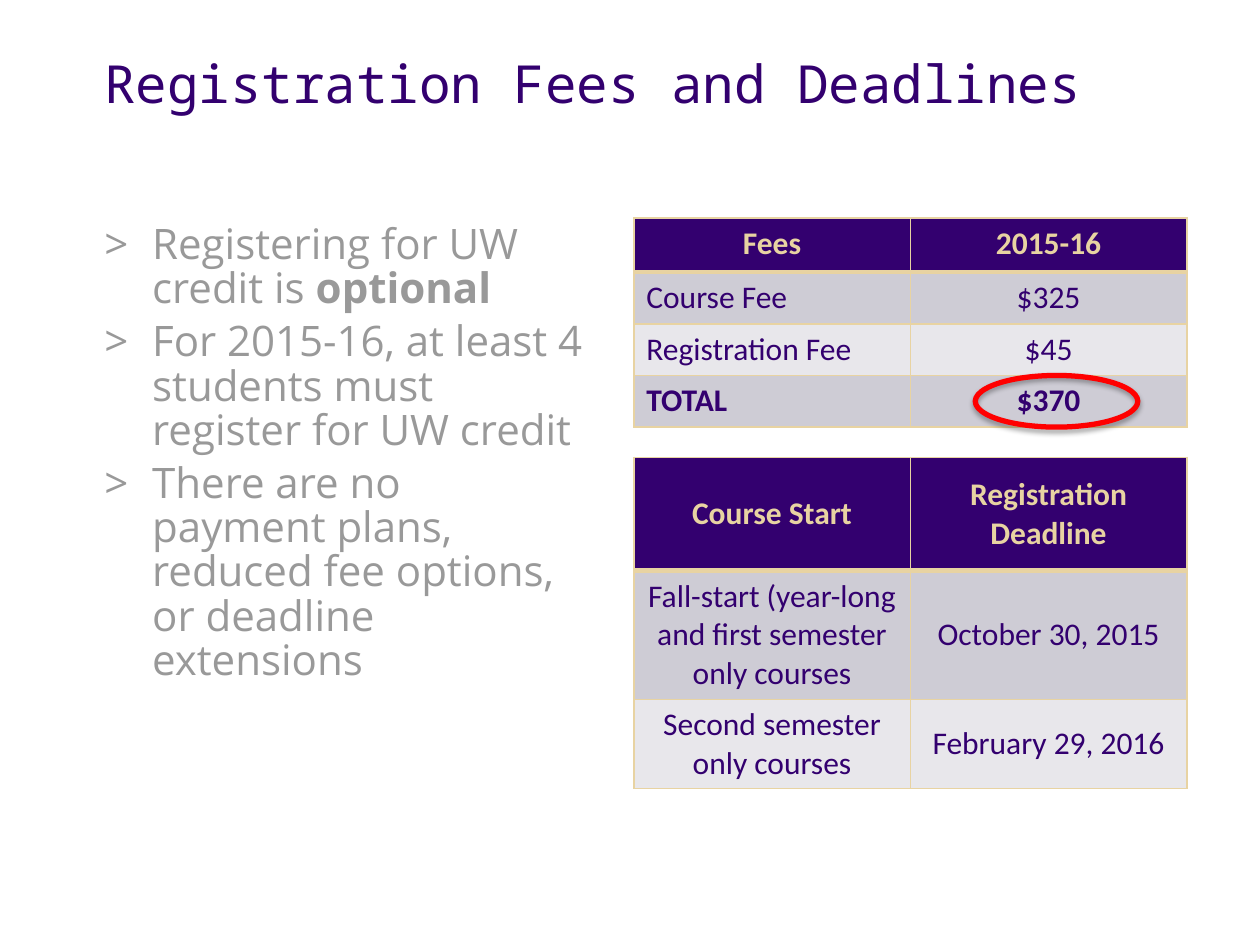
from lxml.etree import SubElement
from pptx import Presentation
from pptx.dml.color import RGBColor
from pptx.enum.shapes import MSO_SHAPE as Shape
from pptx.enum.text import MSO_ANCHOR as Anchor, PP_ALIGN as Align
from pptx.oxml import parse_xml
from pptx.oxml.ns import nsdecls, qn
from pptx.util import Inches, Pt

# Content
TITLE = "Registration Fees and Deadlines"
POINTS = [  # each point is a list of (text, bold) runs
    [("Registering for UW credit is ", False), ("optional", True)],
    [("For 2015-16, at least 4 students must register for UW credit", False)],
    [("There are no payment plans, reduced fee options, or deadline extensions", False)],
]
FEES = [("Fees", "2015-16"), ("Course Fee", "$325"),
        ("Registration Fee", "$45"), ("TOTAL", "$370")]
DEADLINES = [
    ("Course Start", "Registration Deadline"),
    ("Fall-start (year-long and first semester only courses", "October 30, 2015"),
    ("Second semester only courses", "February 29, 2016"),
]


class Theme:
    purple, gold, grey, red = "33006F", "E8D3A2", "999999", "FF0000"
    bands = ("CECCD5", "E8E7EB")
    title_font, body_font, table_font = "Noto Sans Mono", "Open Sans", "Calibri"
    title_size, body_size, table_size = Pt(30), Pt(24), Pt(18)
    rule, heavy_rule = Pt(1), Pt(3)


# Layout
LEFT, TOP = 0.73, 1.73
TABLE_LEFT, COLUMN = 5.03, 2.195
FEE_ROWS = [0.43, 0.41, 0.41, 0.41]
DEADLINE_TOP, DEADLINE_ROWS = 3.63, [0.9, 1.02, 0.71]
INDENT = Inches(0.38)


def add_run(paragraph, text, font, size, color, bold=False):
    run = paragraph.add_run()
    run.text = text
    run.font.name, run.font.size, run.font.bold = font, size, bold
    run.font.color.rgb = RGBColor.from_string(color)


def add_text_frame(slide, left, top, width, height):
    frame = slide.shapes.add_textbox(*map(Inches, (left, top, width, height))).text_frame
    frame.word_wrap = True
    return frame


def set_bullet(paragraph, mark):
    props = paragraph._p.get_or_add_pPr()
    props.set("marL", str(INDENT))
    props.set("indent", str(-INDENT))
    SubElement(props, qn("a:buFont"), typeface=Theme.body_font)
    SubElement(props, qn("a:buChar"), char=mark)


def set_borders(cell, top, bottom):
    props = cell._tc.get_or_add_tcPr()
    widths = {"L": Theme.rule, "R": Theme.rule, "T": top, "B": bottom}
    for position, (side, width) in enumerate(widths.items()):
        props.insert(position, parse_xml(
            f'<a:ln{side} {nsdecls("a")} w="{width}"><a:solidFill>'
            f'<a:srgbClr val="{Theme.gold}"/></a:solidFill></a:ln{side}>'))


def add_table(slide, rows, top, heights, anchor, label_align, bold_last=False):
    table = slide.shapes.add_table(
        len(rows), 2, Inches(TABLE_LEFT), Inches(top),
        Inches(2 * COLUMN), Inches(sum(heights))).table
    for column in table.columns:
        column.width = Inches(COLUMN)
    for r, (texts, height) in enumerate(zip(rows, heights)):
        table.rows[r].height = Inches(height)
        header = r == 0
        bold = header or (bold_last and r == len(rows) - 1)
        for c, text in enumerate(texts):
            cell = table.cell(r, c)
            cell.vertical_anchor = anchor
            cell.fill.solid()
            cell.fill.fore_color.rgb = RGBColor.from_string(
                Theme.purple if header else Theme.bands[(r - 1) % 2])
            set_borders(cell,
                        top=Theme.heavy_rule if r == 1 else Theme.rule,
                        bottom=Theme.heavy_rule if header else Theme.rule)
            paragraph = cell.text_frame.paragraphs[0]
            paragraph.alignment = Align.CENTER if header or c else label_align
            add_run(paragraph, text, Theme.table_font, Theme.table_size,
                    Theme.gold if header else Theme.purple, bold)


def add_total_ring(slide):
    ring = slide.shapes.add_shape(
        Shape.OVAL, Inches(7.74), Inches(2.98), Inches(1.29), Inches(0.41))
    ring.fill.background()
    ring.line.color.rgb = RGBColor.from_string(Theme.red)
    ring.line.width = Theme.heavy_rule
    ring.shadow.inherit = False
    effects = ring._element.spPr.find(qn("a:effectLst"))
    effects.append(parse_xml(
        f'<a:outerShdw {nsdecls("a")} blurRad="{Pt(3.1)}" dist="{Pt(1.8)}" '
        'dir="5400000" rotWithShape="0"><a:srgbClr val="000000">'
        '<a:alpha val="35000"/></a:srgbClr></a:outerShdw>'))


def main():
    deck = Presentation()
    deck.slide_width, deck.slide_height = Inches(10), Inches(7.5)
    slide = deck.slides.add_slide(deck.slide_layouts[6])

    # Title
    heading = add_text_frame(slide, LEFT, 0.41, 8.95, 1.08).paragraphs[0]
    heading.line_spacing = 0.9
    add_run(heading, TITLE, Theme.title_font, Theme.title_size, Theme.purple)

    # Bulleted points
    body = add_text_frame(slide, LEFT, TOP, 4, 5.21)
    for i, runs in enumerate(POINTS):
        point = body.add_paragraph() if i else body.paragraphs[0]
        set_bullet(point, ">")
        point.line_spacing = 0.88
        if i:
            point.space_before = Pt(4.8)
        for text, bold in runs:
            add_run(point, text, Theme.body_font, Theme.body_size, Theme.grey, bold)

    # Fees with the total ringed, then deadlines
    add_table(slide, FEES, TOP, FEE_ROWS, Anchor.TOP, Align.LEFT, bold_last=True)
    add_total_ring(slide)
    add_table(slide, DEADLINES, DEADLINE_TOP, DEADLINE_ROWS, Anchor.MIDDLE, Align.CENTER)

    deck.save("out.pptx")


if __name__ == "__main__":
    main()
